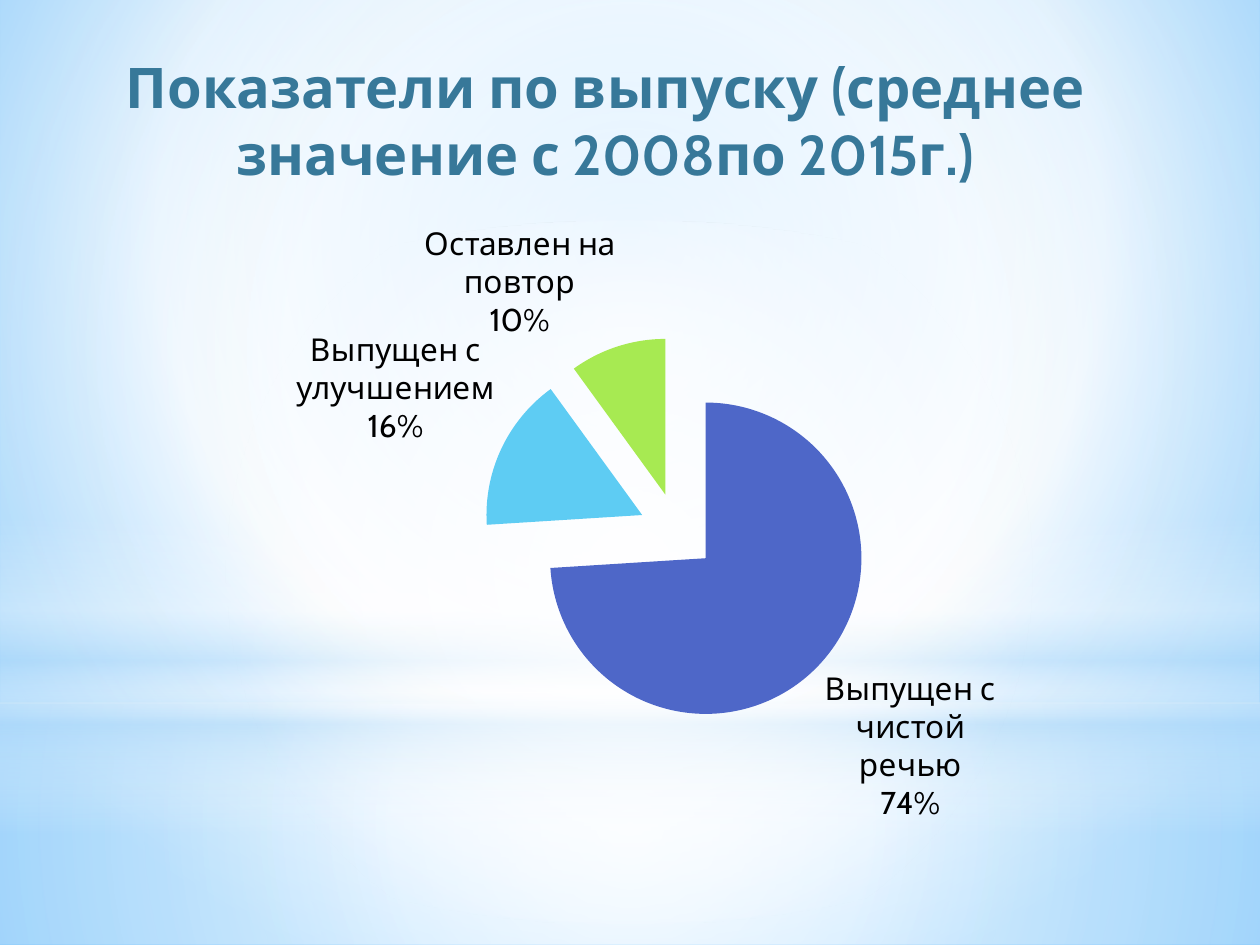
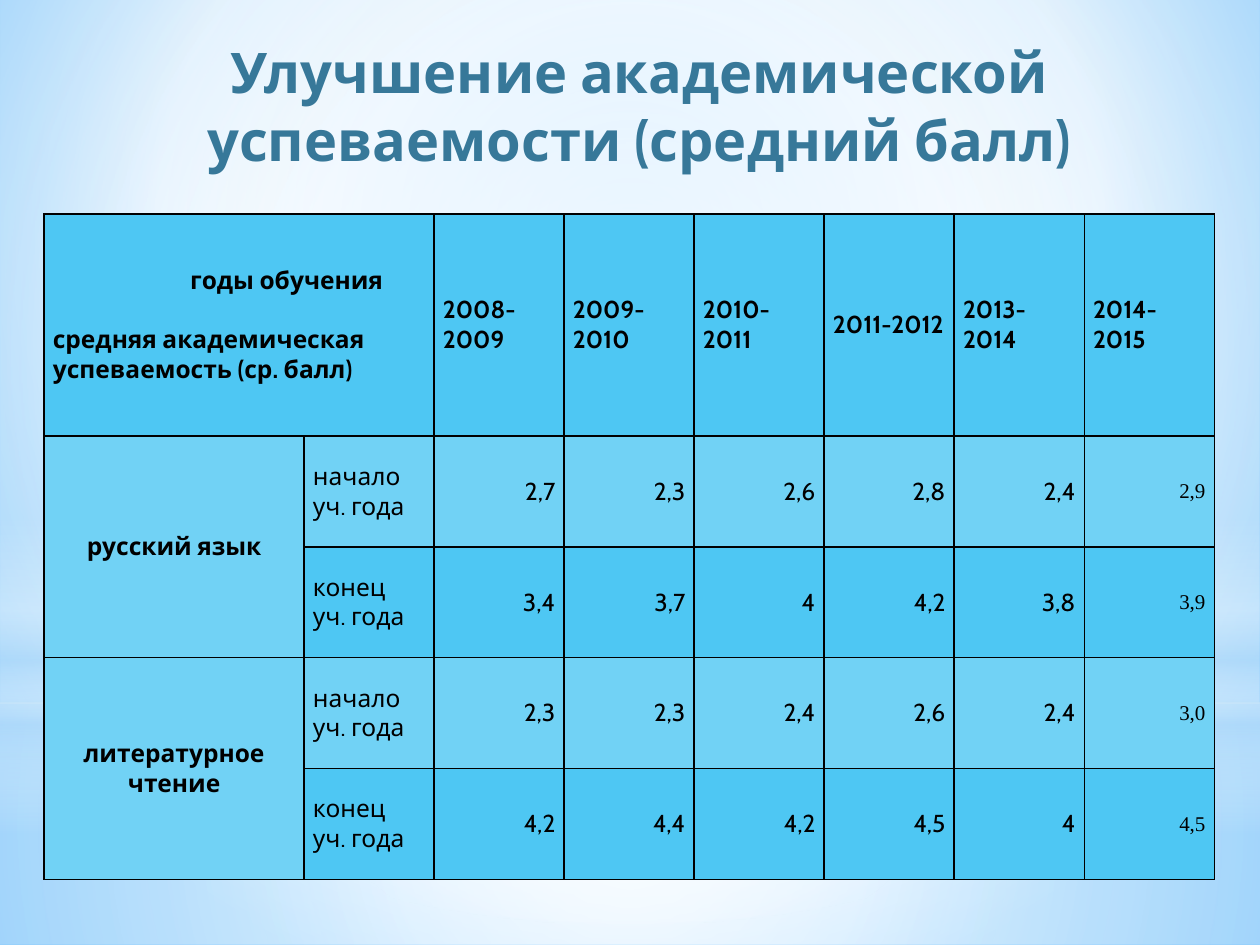
from dataclasses import dataclass

from lxml import etree
from pptx import Presentation
from pptx.chart.data import CategoryChartData
from pptx.dml.color import RGBColor
from pptx.enum.chart import XL_CHART_TYPE, XL_LABEL_POSITION
from pptx.enum.shapes import MSO_SHAPE
from pptx.enum.text import MSO_ANCHOR, MSO_AUTO_SIZE, PP_ALIGN
from pptx.oxml.ns import qn
from pptx.util import Inches, Pt

PIE = XL_CHART_TYPE.PIE
OUTSIDE = XL_LABEL_POSITION.OUTSIDE_END
RECT, OVAL = MSO_SHAPE.RECTANGLE, MSO_SHAPE.OVAL
MIDDLE, FIXED = MSO_ANCHOR.MIDDLE, MSO_AUTO_SIZE.NONE
LEFT, CENTER, RIGHT = PP_ALIGN.LEFT, PP_ALIGN.CENTER, PP_ALIGN.RIGHT
TITLE_ONLY = 5
COLS, ROWS = 100, 75
CELL = Inches(0.1)
MID = (50, 50, 50, 50)


@dataclass(frozen=True)
class Theme:
    font: str = "Cabin"
    serif: str = "Times New Roman"
    title: str = "377899"
    ink: str = "000000"
    band: str = "4EC7F3"
    light: str = "71D2F5"
    white: str = "FFFFFF"
    haze: str = "B4DCFA"
    core: str = "9ED5FF"
    edge: str = "5BB9FF"
    slices: tuple = ("4E67C8", "5ECCF3", "A7EA52")
    big: int = 32
    label: int = 18
    body: int = 14
    small: int = 12


THEME = Theme()
SKY = ((0, THEME.core, 100), (60, THEME.white, 100), (100, THEME.edge, 100))
LAYERS = (
    (RECT, (0, 55.8, COLS, 19.2), MID,
     ((0, THEME.white, 91), (37, THEME.white, 76), (100, THEME.haze, 79))),
    (RECT, (0, 0, COLS, 55.8), MID,
     ((0, THEME.white, 89), (48, THEME.white, 62), (100, THEME.haze, 79))),
    (RECT, (0, 41.2, COLS, 25), None,
     ((0, THEME.white, 0), (29, THEME.white, 30), (45, THEME.haze, 40),
      (55, THEME.white, 26), (65, THEME.haze, 60), (100, THEME.white, 0))),
    (OVAL, (0, 17.5, COLS, 55.8), MID,
     ((0, THEME.white, 100), (56, THEME.white, 0))),
)

RESULTS = {
    "Выпущен с чистой речью": 74,
    "Выпущен с улучшением": 16,
    "Оставлен на повтор": 10,
}
YEARS = ("2008-2009", "2009-2010", "2010-2011", "2011-2012", "2013-2014", "2014-2015")
TERMS = ("начало уч. года", "конец уч. года")
MARKS = {
    "русский язык": (
        ("2,7", "2,3", "2,6", "2,8", "2,4", "2,9"),
        ("3,4", "3,7", "4", "4,2", "3,8", "3,9"),
    ),
    "литературное чтение": (
        ("2,3", "2,3", "2,4", "2,6", "2,4", "3,0"),
        ("4,2", "4,4", "4,2", "4,5", "4", "4,5"),
    ),
}


def area(*spans):
    return [round(span * CELL) for span in spans]


def apply(item, values):
    for name, value in values.items():
        setattr(item, name, value)


def style(font, size, face=THEME.font, color=THEME.ink, bold=False):
    apply(font, {"size": Pt(size), "name": face, "bold": bold})
    font.color.rgb = RGBColor.from_string(color)


def node(parent, tag, **attrs):
    return etree.SubElement(parent, qn(tag), {k: str(v) for k, v in attrs.items()})


def blend(owner, fill, stops, focus):
    fill.gradient()
    grad = next(owner.iter(qn("a:gradFill")))
    grad.clear()
    grad.set("rotWithShape", "1")
    marks = node(grad, "a:gsLst")
    for spot, color, alpha in stops:
        stop = node(marks, "a:gs", pos=spot * 1000)
        tint = node(stop, "a:srgbClr", val=color)
        node(tint, "a:alpha", val=alpha * 1000)
    if focus:
        way = node(grad, "a:path", path="circle")
        node(way, "a:fillToRect", **{k: v * 1000 for k, v in zip("ltrb", focus)})
    else:
        node(grad, "a:lin", ang=90 * 60000, scaled=0)


def backdrop(master, slide):
    blend(master.element, master.background.fill, SKY, (20, 10, 20, 60))
    tree = master.shapes.element
    for n, (kind, box, focus, stops) in enumerate(LAYERS):
        layer = slide.shapes.add_shape(kind, *area(*box))
        layer.shadow.inherit = False
        layer.line.fill.background()
        blend(layer.element, layer.fill, stops, focus)
        next(layer.element.iter(qn("p:cNvPr"))).set("id", str(100 + n))
        tree.insert(2 + n, layer.element)


def heading(slide, text, box):
    title = slide.shapes.title
    apply(title, dict(zip(("left", "top", "width", "height"), area(*box))))
    frame = title.text_frame
    frame.text = text
    apply(frame, {"word_wrap": True, "auto_size": FIXED, "vertical_anchor": MIDDLE})
    line = frame.paragraphs[0]
    line.alignment = CENTER
    style(line.runs[0].font, THEME.big, color=THEME.title, bold=True)


def place(chart, **spans):
    plot = next(chart.element.iter(qn("c:plotArea")))
    for old in plot.findall(qn("c:layout")):
        plot.remove(old)
    layout = node(plot, "c:layout")
    plot.insert(0, layout)
    manual = node(layout, "c:manualLayout")
    node(manual, "c:layoutTarget", val="inner")
    for side in "xy":
        node(manual, f"c:{side}Mode", val="edge")
    for side, share in spans.items():
        node(manual, f"c:{side}", val=share)


def pie(slide, results, box):
    data = CategoryChartData()
    data.categories = list(results)
    data.add_series("Series 1", list(results.values()))
    chart = slide.shapes.add_chart(PIE, *area(*box), data).chart
    apply(chart, {"has_legend": False, "has_title": False})
    style(chart.font, THEME.label)
    place(chart, x=0.35, y=0.2, w=0.37, h=0.6)
    plot = chart.plots[0]
    plot.vary_by_categories = True
    series = plot.series[0]
    apart = etree.Element(qn("c:explosion"), val="25")
    next(series._element.iter(qn("c:cat"))).addprevious(apart)
    for n, color in enumerate(THEME.slices):
        fill = series.points[n].format.fill
        fill.solid()
        fill.fore_color.rgb = RGBColor.from_string(color)
    labels = series.data_labels
    apply(labels, {
        "show_value": False, "show_percentage": True, "show_category_name": True,
        "number_format": "0%", "number_format_is_linked": False, "position": OUTSIDE,
    })
    style(labels.font, THEME.label)
    split = etree.Element(qn("c:separator"))
    split.text = "\n"
    next(series._element.iter(qn("c:showBubbleSize"))).addnext(split)


def border(cell):
    props = cell._tc.get_or_add_tcPr()
    for n, side in enumerate("LRTB"):
        line = node(props, f"a:ln{side}", w=Pt(1))
        props.insert(n, line)
        node(node(line, "a:solidFill"), "a:srgbClr", val=THEME.ink)


def write(cell, text, align=LEFT, size=THEME.body, face=THEME.font, bold=False):
    cell.text = text
    for line in cell.text_frame.paragraphs:
        line.alignment = align
        style(line.runs[0].font, size, face, bold=bold)


def grades(slide, left, top, unit, step):
    last = len(YEARS) + 1
    count = 1 + len(MARKS) * len(TERMS)
    box = area(left, top, unit * (last + 2), step * (count + 1))
    table = slide.shapes.add_table(count, last + 1, *box).table
    apply(table, {"first_row": False, "horz_banding": False})
    for n, col in enumerate(table.columns):
        col.width = area(unit * (1 if n else 2))[0]
    for n, row in enumerate(table.rows):
        row.height = area(step * (1 if n else 2))[0]
        for cell in row.cells:
            apply(cell, {
                "margin_left": Inches(0.07), "margin_right": Inches(0.07),
                "margin_top": 0, "margin_bottom": 0, "vertical_anchor": MIDDLE,
            })
            cell.fill.solid()
            tone = THEME.light if n % 2 else THEME.band
            cell.fill.fore_color.rgb = RGBColor.from_string(tone)
            border(cell)
    corner = table.cell(0, 0)
    corner.merge(table.cell(0, 1))
    write(corner, "годы обучения\nсредняя академическая успеваемость (ср. балл)", bold=True)
    first, second = corner.text_frame.paragraphs
    first._p.get_or_add_pPr().set("marL", str(Inches(1.09)))
    second.space_before = Pt(17)
    for n, year in enumerate(YEARS, 2):
        write(table.cell(0, n), year, bold=True)
    for m, (subject, scores) in enumerate(MARKS.items()):
        top_row = 1 + m * len(TERMS)
        name = table.cell(top_row, 0)
        name.merge(table.cell(top_row + len(TERMS) - 1, 0))
        write(name, subject, CENTER, bold=True)
        for r, (term, values) in enumerate(zip(TERMS, scores), top_row):
            write(table.cell(r, 1), term)
            table.cell(r, 1).margin_right = Inches(0.15)
            for c, value in enumerate(values, 2):
                look = (THEME.small, THEME.serif) if c == last else (THEME.body, THEME.font)
                write(table.cell(r, c), value, RIGHT, *look)


def main():
    deck = Presentation()
    apply(deck, {"slide_width": COLS * CELL, "slide_height": ROWS * CELL})
    layout = deck.slide_layouts[TITLE_ONLY]
    share, score = [deck.slides.add_slide(layout) for _ in range(2)]
    backdrop(deck.slide_master, share)
    heading(share, "Показатели по выпуску (среднее значение с 2008по 2015г.)",
            (2, 3.6, 92.1, 11.8))
    pie(share, RESULTS, (9.1, 16.2, 83.5, 52))
    heading(score, "Улучшение академической успеваемости (средний балл)",
            (5.1, 2.1, 91.3, 12.5))
    grades(score, 3.5, 17, 10.32, 8.8)
    deck.save("out.pptx")


if __name__ == "__main__":
    main()
